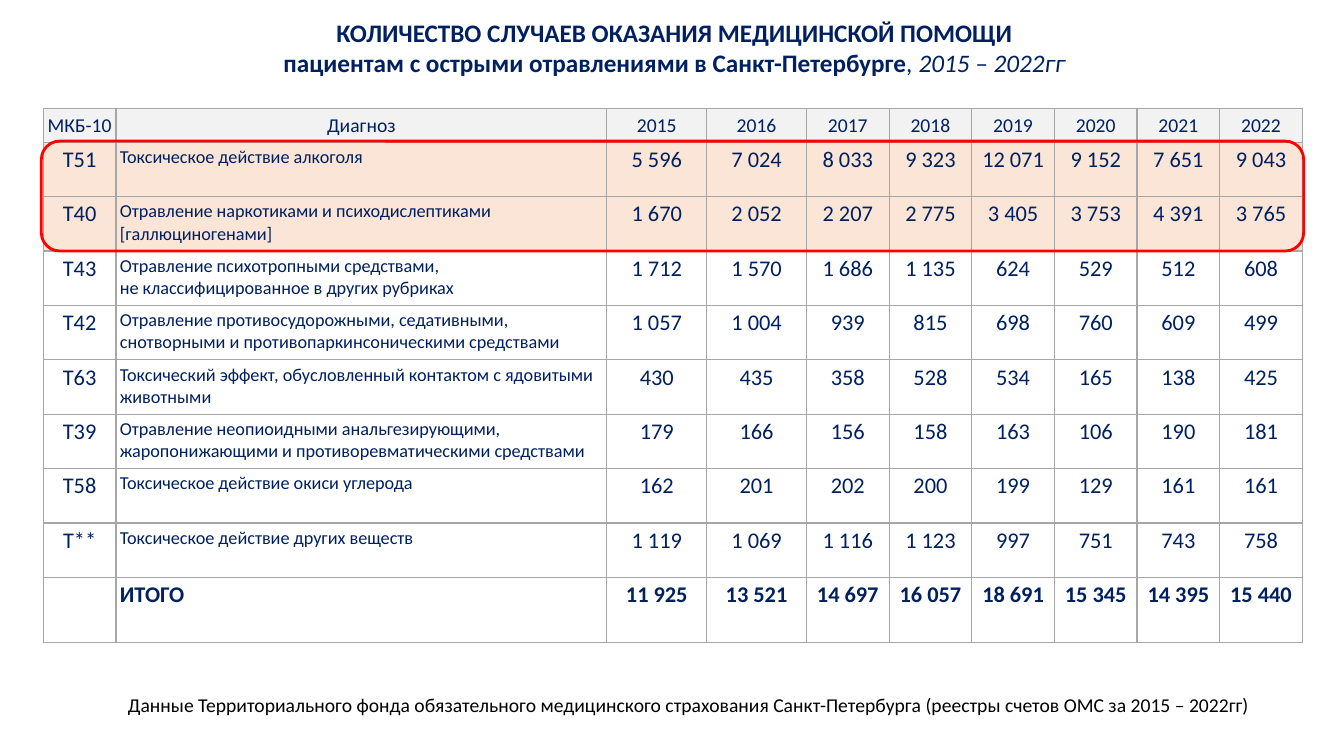
from lxml import etree
from pptx import Presentation
from pptx.dml.color import RGBColor
from pptx.enum import shapes, text
from pptx.oxml import ns
from pptx.util import Inches, Pt

NAVY = RGBColor(0x00, 0x20, 0x60)
BLACK = RGBColor(0x00, 0x00, 0x00)
WHITE = RGBColor(0xFF, 0xFF, 0xFF)
RED = RGBColor(0xFF, 0x00, 0x00)
GREY_LINE = RGBColor(0xA6, 0xA6, 0xA6)
HEADER_FILL = RGBColor(0xF2, 0xF2, 0xF2)
PEACH = RGBColor(0xFB, 0xE5, 0xD6)
FONT = "Calibri"

DIAGNOSES = [
    ("T51", "Токсическое действие алкоголя",
     [5596, 7024, 8033, 9323, 12071, 9152, 7651, 9043]),
    ("T40", "Отравление наркотиками и психодислептиками [галлюциногенами]",
     [1670, 2052, 2207, 2775, 3405, 3753, 4391, 3765]),
    ("T43", "Отравление психотропными средствами, \nне классифицированное в других рубриках",
     [1712, 1570, 1686, 1135, 624, 529, 512, 608]),
    ("T42", "Отравление противосудорожными, седативными, снотворными и противопаркинсоническими средствами",
     [1057, 1004, 939, 815, 698, 760, 609, 499]),
    ("T63", "Токсический эффект, обусловленный контактом с ядовитыми животными",
     [430, 435, 358, 528, 534, 165, 138, 425]),
    ("T39", "Отравление неопиоидными анальгезирующими, жаропонижающими и противоревматическими средствами",
     [179, 166, 156, 158, 163, 106, 190, 181]),
    ("T58", "Токсическое действие окиси углерода",
     [162, 201, 202, 200, 199, 129, 161, 161]),
    ("T**", "Токсическое действие других веществ",
     [1119, 1069, 1116, 1123, 997, 751, 743, 758]),
]
HIGHLIGHTED = ("T51", "T40")


def style_font(paragraph, size, color, bold=False):
    font = paragraph.font
    font.name, font.size, font.bold = FONT, Pt(size), bold
    font.color.rgb = color


def add_borders(cell):
    properties = cell._tc.get_or_add_tcPr()
    for side in ("a:lnL", "a:lnR", "a:lnT", "a:lnB"):
        line = etree.SubElement(properties, ns.qn(side), w=str(Pt(1)))
        fill = etree.SubElement(line, ns.qn("a:solidFill"))
        etree.SubElement(fill, ns.qn("a:srgbClr"), val=str(GREY_LINE))


presentation = Presentation()
presentation.slide_width = Inches(13.33)
presentation.slide_height = Inches(7.5)
slide = presentation.slides.add_slide(presentation.slide_layouts[6])

# Table: header, one row per diagnosis, totals
totals = [sum(year) for year in zip(*(counts for _, _, counts in DIAGNOSES))]
rows = [["МКБ-10", "Диагноз"] + [str(year) for year in range(2015, 2023)]]
for code, name, counts in DIAGNOSES + [("", "ИТОГО", totals)]:
    rows.append([code, name] + [f"{count:,}".replace(",", " ") for count in counts])

column_widths = [0.72, 4.87] + [0.99] * 2 + [0.82] * 6
row_heights = [0.33] + [0.54] * len(DIAGNOSES) + [0.65]
table = slide.shapes.add_table(
    len(rows), len(column_widths), Inches(0.43), Inches(1.08),
    Inches(sum(column_widths)), Inches(sum(row_heights))).table
table.first_row = table.horz_banding = False
for column, width in zip(table.columns, column_widths):
    column.width = Inches(width)

last_row = len(rows) - 1
for row_index, values in enumerate(rows):
    table.rows[row_index].height = Inches(row_heights[row_index])
    is_header, is_total = row_index == 0, row_index == last_row
    if is_header:
        row_fill = HEADER_FILL
    else:
        row_fill = PEACH if values[0] in HIGHLIGHTED else WHITE
    for column_index, value in enumerate(values):
        cell = table.cell(row_index, column_index)
        is_name = column_index == 1 and not is_header
        cell.margin_left = cell.margin_right = Inches(0.04)
        cell.margin_top = cell.margin_bottom = Inches(0.04)
        cell.vertical_anchor = text.MSO_ANCHOR.MIDDLE if is_header else text.MSO_ANCHOR.TOP
        add_borders(cell)
        cell.fill.solid()
        cell.fill.fore_color.rgb = row_fill

        paragraph = cell.text_frame.paragraphs[0]
        if value:
            paragraph.text = value
        paragraph.alignment = text.PP_ALIGN.LEFT if is_name else text.PP_ALIGN.CENTER
        if is_header:
            size = 14
        else:
            size = 13 if is_name and not is_total else 16
        style_font(paragraph, size, NAVY, bold=is_total)

# Title
title = slide.shapes.add_textbox(Inches(0.66), Inches(0.12), Inches(12.06), Inches(0.71)).text_frame
title.word_wrap = True
title.auto_size = text.MSO_AUTO_SIZE.SHAPE_TO_FIT_TEXT
title.text = ("КОЛИЧЕСТВО СЛУЧАЕВ ОКАЗАНИЯ МЕДИЦИНСКОЙ ПОМОЩИ\n"
              "пациентам с острыми отравлениями в Санкт-Петербурге")
for paragraph in title.paragraphs:
    paragraph.alignment = text.PP_ALIGN.CENTER
    style_font(paragraph, 18, NAVY, bold=True)
period = title.paragraphs[1].add_run()
period.text = ", 2015 – 2022гг"
period.font.bold, period.font.italic = False, True

# Frame around the highlighted diagnoses
frame = slide.shapes.add_shape(
    shapes.MSO_SHAPE.ROUNDED_RECTANGLE, Inches(0.41), Inches(1.4), Inches(12.52), Inches(1.09))
frame.shadow.inherit = False
frame.fill.background()
frame.line.color.rgb = RED
frame.line.width = Pt(2)

# Data source
footnote = slide.shapes.add_textbox(Inches(1.17), Inches(6.83), Inches(11.39), Inches(0.34)).text_frame
footnote.word_wrap = False
footnote.auto_size = text.MSO_AUTO_SIZE.SHAPE_TO_FIT_TEXT
footnote.text = ("Данные Территориального фонда обязательного медицинского страхования "
                 "Санкт-Петербурга (реестры счетов ОМС за 2015 – 2022гг)")
style_font(footnote.paragraphs[0], 14, BLACK)

presentation.save("out.pptx")
